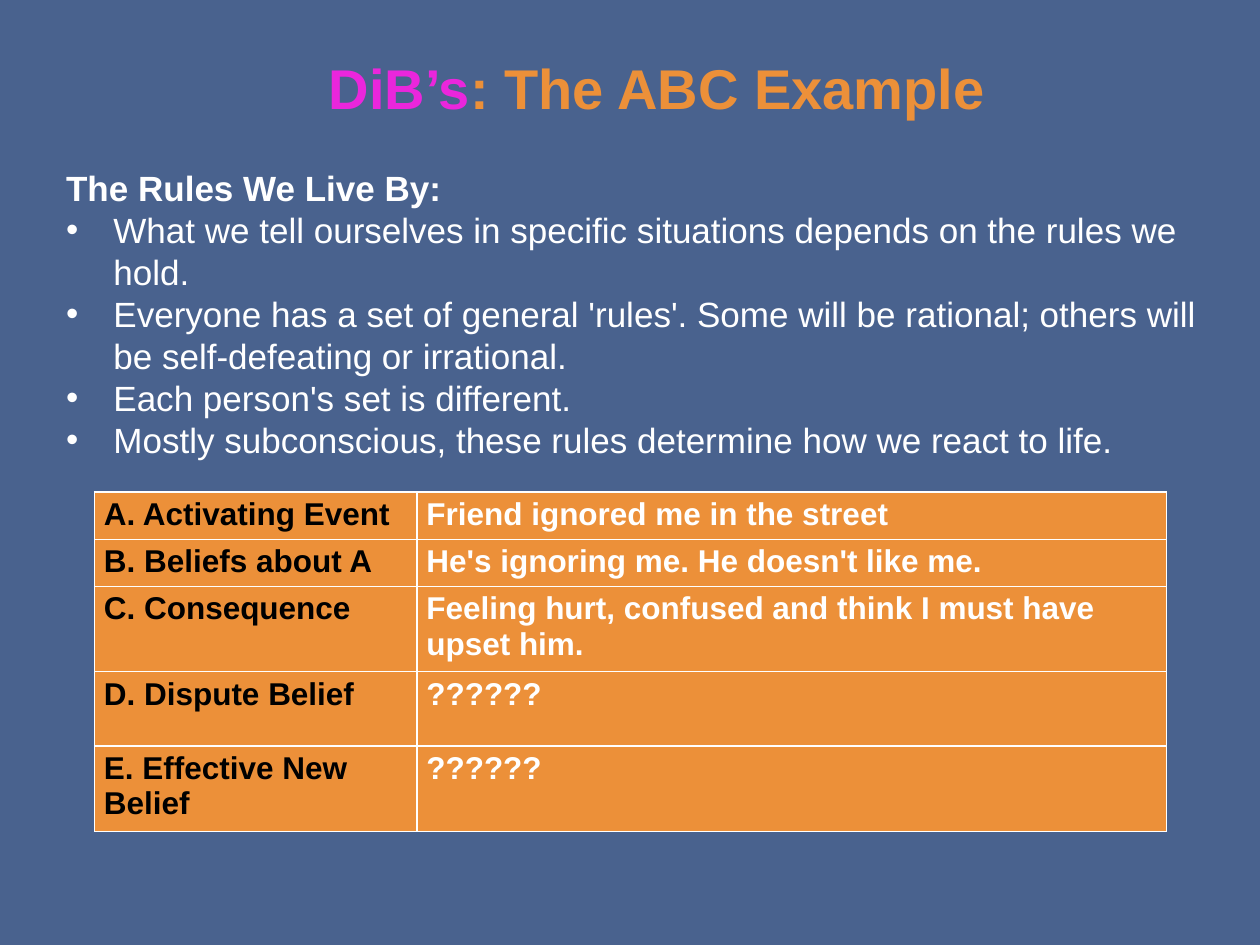
"""Build the slide on the ABC example with its rules and table."""
from lxml import etree
from pptx import Presentation
from pptx.dml.color import RGBColor
from pptx.enum.text import MSO_ANCHOR, PP_ALIGN
from pptx.oxml.ns import qn
from pptx.util import Pt

CENTER, MIDDLE = PP_ALIGN.CENTER, MSO_ANCHOR.MIDDLE
COLORS = {"back": "49628E", "pink": "EA26DC", "orange": "EC9039",
          "black": "000000", "white": "FFFFFF"}
RULES = [
    "What we tell ourselves in specific situations depends on the rules we hold.",
    "Everyone has a set of general 'rules'. Some will be rational; "
    "others will be self-defeating or irrational.",
    "Each person's set is different.",
    "Mostly subconscious, these rules determine how we react to life.",
]
ROWS = [
    (25.4, "A. Activating Event", "Friend ignored me in the street"),
    (25.4, "B. Beliefs about A", "He's ignoring me. He doesn't like me."),
    (45.6, "C. Consequence", "Feeling hurt, confused and think I must have upset him."),
    (42.6, "D. Dispute Belief", "??????"),
    (45.6, "E. Effective New Belief", "??????"),
]


def rgb(name):
    return RGBColor.from_string(COLORS[name])


def style(r, size, color, bold=True):
    r.font.name = "Arial"
    r.font.size = Pt(size)
    r.font.bold = bold
    r.font.color.rgb = rgb(color)


prs = Presentation()
prs.slide_width, prs.slide_height = Pt(720), Pt(540)
s = prs.slides.add_slide(prs.slide_layouts[6])
s.background.fill.solid()
s.background.fill.fore_color.rgb = rgb("back")

sp = s.shapes.add_textbox(Pt(57.6), Pt(21), Pt(635.8), Pt(57.6))
tf = sp.text_frame
tf.word_wrap = True
tf.vertical_anchor = MIDDLE
p = tf.paragraphs[0]
p.alignment = CENTER
for text, color in [("DiB’s", "pink"), (": The ABC Example", "orange")]:
    r = p.add_run()
    r.text = text
    style(r, 32, color)

height = sum(row[0] for row in ROWS)
table = s.shapes.add_table(len(ROWS), 2, Pt(54), Pt(281.2), Pt(612.7), Pt(height)).table
table.first_row = table.horz_banding = False
table.columns[0].width, table.columns[1].width = Pt(184.3), Pt(428.4)
for i, (row_height, *texts) in enumerate(ROWS):
    table.rows[i].height = Pt(row_height)
    for j, text in enumerate(texts):
        cell = table.cell(i, j)
        cell.fill.solid()
        cell.fill.fore_color.rgb = rgb("orange")
        cell.margin_left = cell.margin_right = Pt(5.4)
        cell.margin_top = cell.margin_bottom = Pt(2.7)
        cell.text_frame.text = text
        style(cell.text_frame.paragraphs[0].runs[0], 18, ("black", "white")[j])

sp = s.shapes.add_textbox(Pt(32.4), Pt(92.2), Pt(660.2), Pt(175))
tf = sp.text_frame
tf.word_wrap = True
tf.margin_left = tf.margin_right = Pt(5.4)
tf.margin_top = tf.margin_bottom = Pt(2.7)
tf.text = "The Rules We Live By:"
style(tf.paragraphs[0].runs[0], 20, "white")
for rule in RULES:
    p = tf.add_paragraph()
    p.text = rule
    pPr = p._p.get_or_add_pPr()
    pPr.set("marL", str(Pt(27)))
    pPr.set("indent", str(-Pt(27)))
    etree.SubElement(pPr, qn("a:buFont")).set("typeface", "Arial")
    etree.SubElement(pPr, qn("a:buChar")).set("char", "•")
    style(p.runs[0], 20, "white", bold=False)

prs.save("out.pptx")
